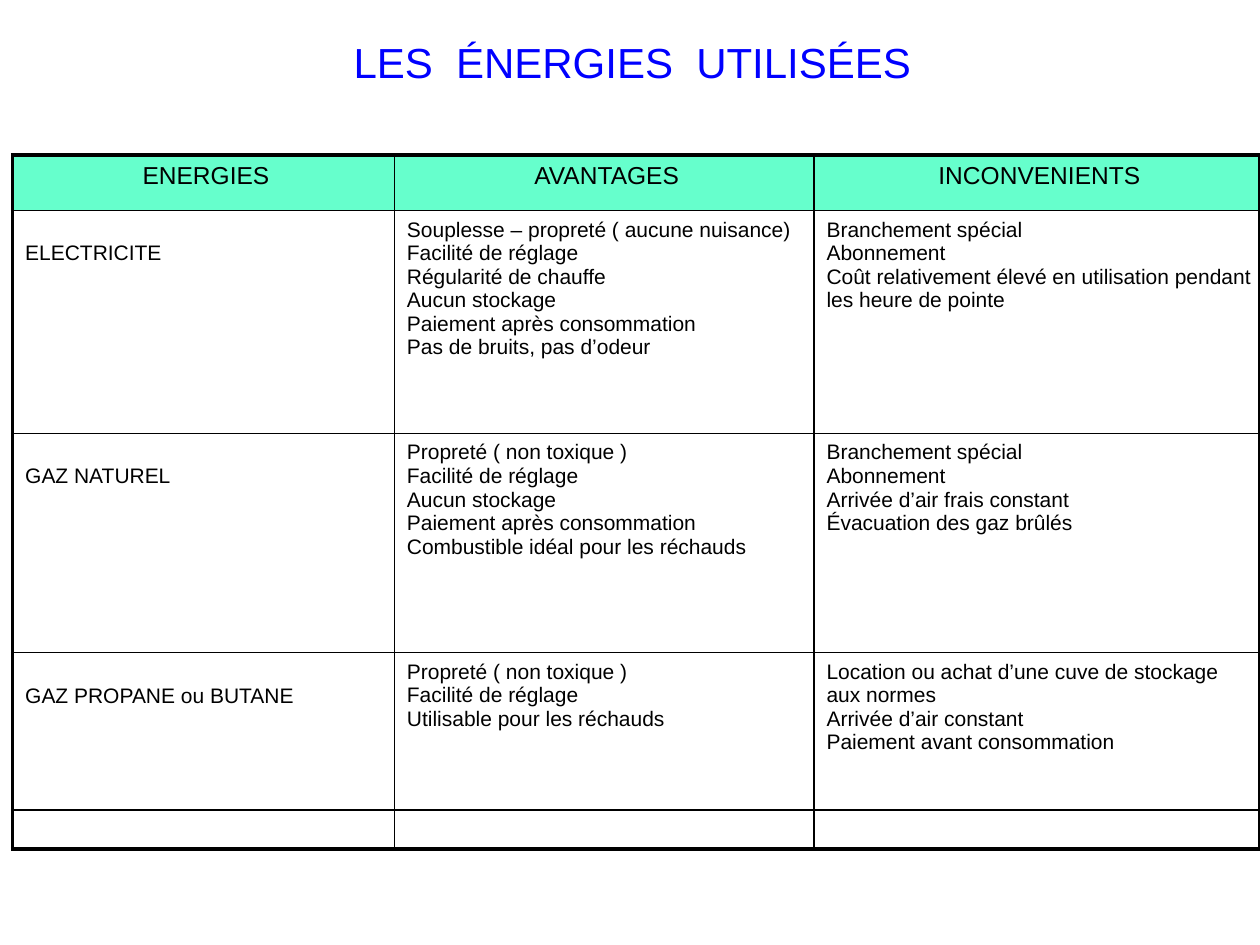
from lxml.etree import SubElement
from pptx import Presentation
from pptx.dml.color import RGBColor
from pptx.enum.text import MSO_ANCHOR, PP_ALIGN
from pptx.oxml.ns import qn
from pptx.util import Inches, Pt

BLUE = RGBColor(0x00, 0x00, 0xFF)
BLACK = RGBColor(0x00, 0x00, 0x00)
MINT = RGBColor(0x66, 0xFF, 0xCC)

THIN, THICK = Pt(1), Pt(2.25)
COLUMN_WIDTHS = [3.03, 3.33, 3.54]
ROW_HEIGHTS = [0.44, 1.77, 1.74, 1.25, 0.31]
HEADINGS = ["ENERGIES", "AVANTAGES", "INCONVENIENTS"]
ENERGIES = [
    ("ELECTRICITE",
     ["Souplesse – propreté ( aucune nuisance)", "Facilité de réglage",
      "Régularité de chauffe", "Aucun stockage",
      "Paiement après consommation", "Pas de bruits, pas d’odeur"],
     ["Branchement spécial", "Abonnement",
      "Coût relativement élevé en utilisation pendant les heure de pointe"]),
    ("GAZ NATUREL",
     ["Propreté ( non toxique )", "Facilité de réglage", "Aucun stockage",
      "Paiement après consommation", "Combustible idéal pour les réchauds"],
     ["Branchement spécial", "Abonnement", "Arrivée d’air frais constant",
      "Évacuation des gaz brûlés"]),
    ("GAZ PROPANE ou BUTANE",
     ["Propreté ( non toxique )", "Facilité de réglage",
      "Utilisable pour les réchauds"],
     ["Location ou achat d’une cuve de stockage aux normes",
      "Arrivée d’air constant", "Paiement avant consommation"]),
]

HEADING = {"size": Pt(14), "name": "Arial"}
BODY = {"size": Pt(12), "name": "Arial"}
TITLE = {"size": Pt(24), "name": "Arial"}
CELL_MARGINS = {"margin_left": Inches(0.1), "margin_right": Inches(0.06),
                "margin_top": Inches(0.06), "margin_bottom": Inches(0.06)}
NAME_MARGINS = {**CELL_MARGINS, "margin_top": Inches(0.25)}
EMPTY_MARGINS = dict.fromkeys(CELL_MARGINS, 0)
TITLE_FRAME = {**EMPTY_MARGINS, "margin_left": Inches(0.04),
               "word_wrap": True, "vertical_anchor": MSO_ANCHOR.MIDDLE}


def apply(target, values):
    for name, value in values.items():
        setattr(target, name, value)


def write(frame, lines, font, color=BLACK, align=PP_ALIGN.LEFT):
    for index, line in enumerate(lines):
        para = frame.add_paragraph() if index else frame.paragraphs[0]
        para.alignment = align
        span = para.add_run()
        span.text = line
        apply(span.font, font)
        span.font.color.rgb = color


def draw_borders(cell, widths):
    properties = cell._tc.get_or_add_tcPr()
    for side, width in widths.items():
        line = SubElement(properties, qn(f"a:ln{side}"), w=str(width))
        fill = SubElement(line, qn("a:solidFill"))
        SubElement(fill, qn("a:srgbClr"), val=str(BLACK))


def add_title(page, box):
    frame = page.shapes.add_textbox(*map(Inches, box)).text_frame
    apply(frame, TITLE_FRAME)
    write(frame, ["LES  ÉNERGIES  UTILISÉES"], TITLE, BLUE, PP_ALIGN.CENTER)


def add_energy_table(page, box):
    last_row, last_column = len(ROW_HEIGHTS) - 1, len(COLUMN_WIDTHS) - 1
    table = page.shapes.add_table(
        last_row + 1, last_column + 1, *map(Inches, box)).table
    apply(table, {"first_row": False, "horz_banding": False})
    for column, width in zip(table.columns, COLUMN_WIDTHS):
        column.width = Inches(width)
    for row, height in zip(table.rows, ROW_HEIGHTS):
        row.height = Inches(height)

    contents = [[[heading] for heading in HEADINGS]]
    contents += [[[name], pros, cons] for name, pros, cons in ENERGIES]
    contents.append([[] for _ in HEADINGS])
    for r, row in enumerate(contents):
        for c, lines in enumerate(row):
            cell = table.cell(r, c)
            draw_borders(cell, {
                "L": THICK if c == 0 else THIN,
                "R": THICK if c == last_column else THIN,
                "T": THICK if r == 0 else THIN,
                "B": THICK if r == last_row else THIN})
            if r == 0:
                cell.fill.solid()
                cell.fill.fore_color.rgb = MINT
                apply(cell, CELL_MARGINS)
                write(cell.text_frame, lines, HEADING, align=PP_ALIGN.CENTER)
                continue
            cell.fill.background()
            if not lines:
                apply(cell, EMPTY_MARGINS)
            else:
                apply(cell, CELL_MARGINS if c else NAME_MARGINS)
                write(cell.text_frame, lines, BODY)


def main():
    deck = Presentation()
    apply(deck, {"slide_width": Inches(10), "slide_height": Inches(7.5)})
    page = deck.slides.add_slide(deck.slide_layouts[6])
    add_title(page, (0.75, 0, 8.5, 0.98))
    add_energy_table(page, (0.1, 1.23, 9.9, 5.51))
    deck.save("out.pptx")


if __name__ == "__main__":
    main()
